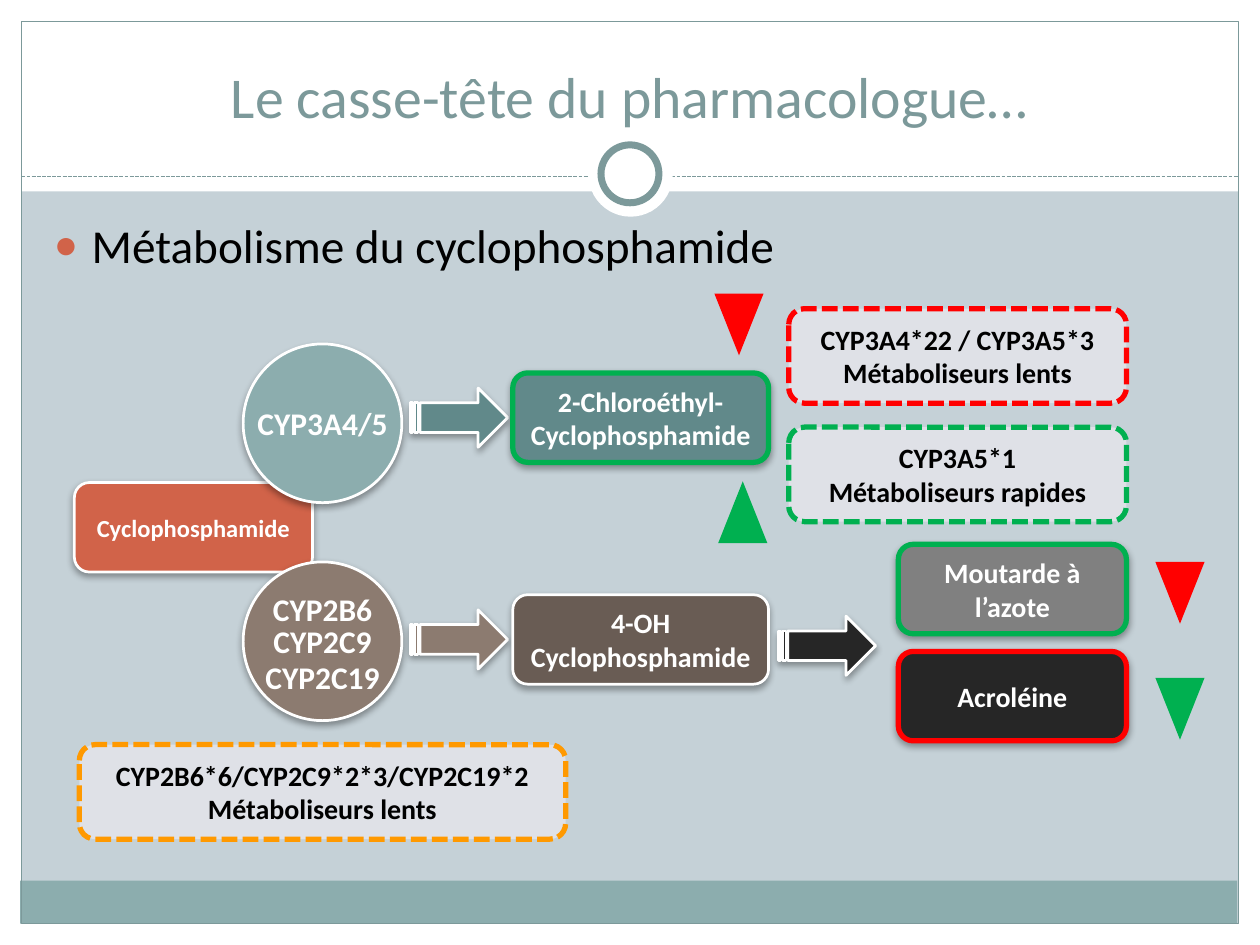
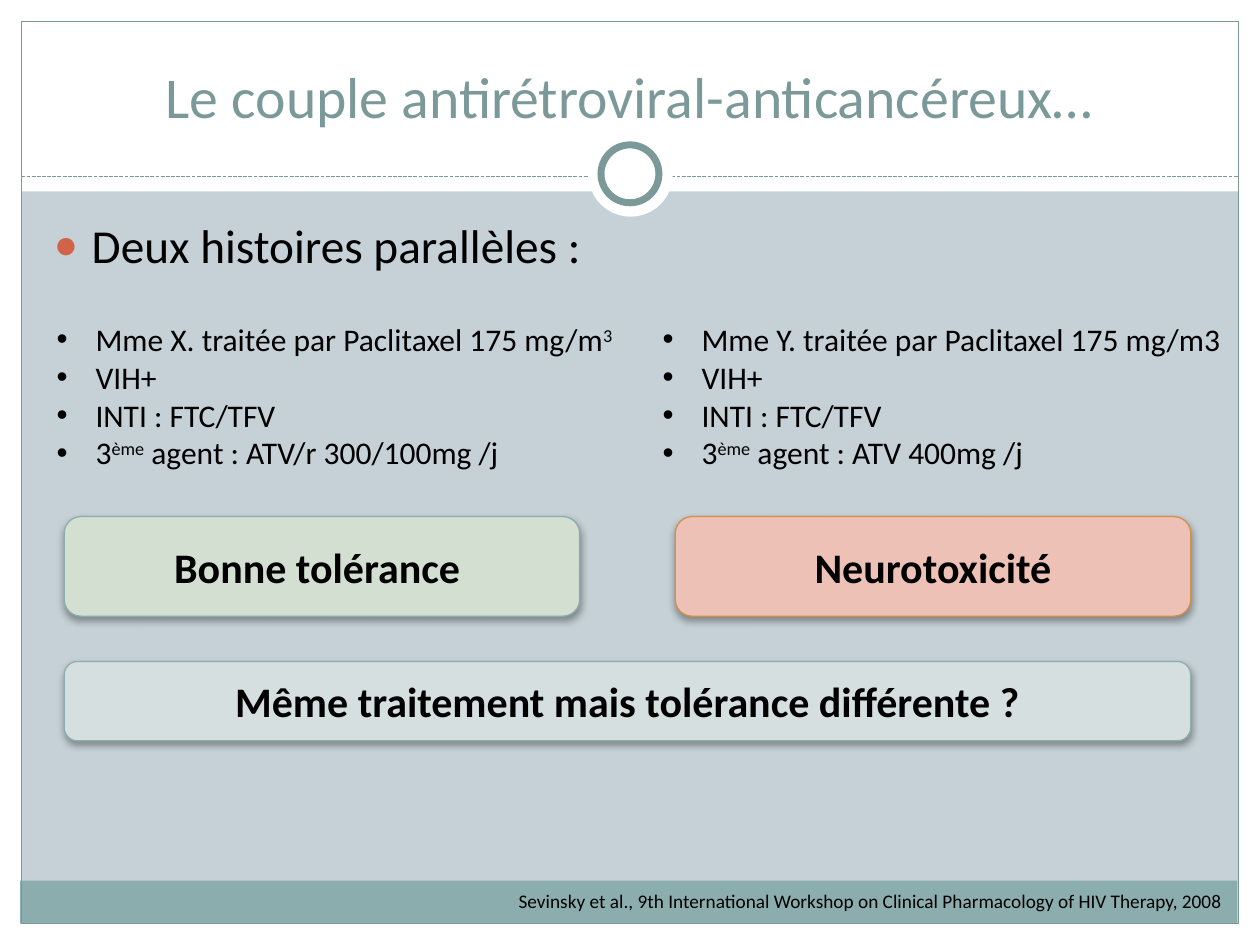
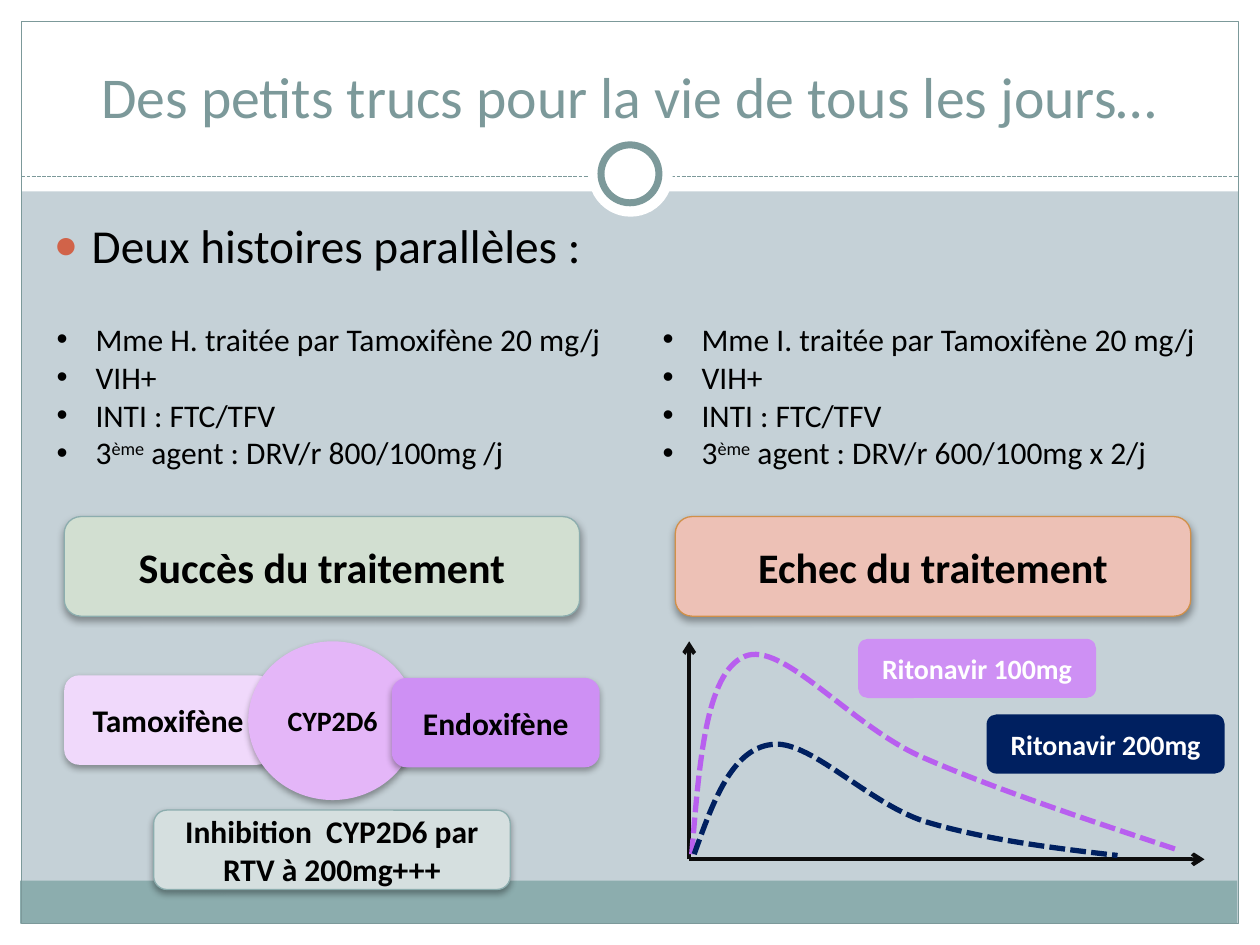
from lxml.etree import SubElement
from pptx import Presentation
from pptx.dml.color import RGBColor
from pptx.enum.dml import MSO_LINE
from pptx.enum.shapes import MSO_CONNECTOR, MSO_SHAPE
from pptx.enum.text import MSO_ANCHOR, MSO_AUTO_SIZE, PP_ALIGN
from pptx.oxml import parse_xml
from pptx.oxml.ns import nsdecls, qn
from pptx.util import Inches, Pt

COLORS = {
    "background": "C5D1D7", "white": "FFFFFF", "black": "000000", "axis": "0D0D0D",
    "slate": "7C999A", "teal": "8CADAE", "deep teal": "61898A", "pale teal": "D5DFDF",
    "rust": "D16349", "ochre": "D19049", "taupe": "8C7B70", "brown": "695C54",
    "charcoal": "262626", "gray": "808080", "mist": "DFE1E7",
    "red": "FF0000", "green": "00B050", "orange": "FF9900",
    "pale green": "D2DFD1", "pale red": "EDC1B6", "navy": "002060",
    "lilac": "F0D9FB", "mauve": "E4B6F8", "violet": "CE90F4", "purple": "B85FEF",
}
RGB = {name: RGBColor.from_string(value) for name, value in COLORS.items()}
FONT = "Calibri"


def write(shape, text, size=16, color="white", bold=True, align=PP_ALIGN.CENTER,
          anchor=MSO_ANCHOR.MIDDLE, bullet=None, bullet_color=None, bullet_size=100, indent=0.31):
    """Fill shape with one paragraph per line; parts between carets are superscript."""
    frame = shape.text_frame
    frame.word_wrap = True
    frame.auto_size = MSO_AUTO_SIZE.NONE
    frame.vertical_anchor = anchor
    for number, line in enumerate(text.split("\n")):
        paragraph = frame.add_paragraph() if number else frame.paragraphs[0]
        paragraph.alignment = align
        if bullet:
            properties = paragraph._p.get_or_add_pPr()
            properties.set("marL", str(Inches(indent)))
            properties.set("indent", str(-Inches(indent)))
            bullet_fill = SubElement(properties, qn("a:buClr"))
            SubElement(bullet_fill, qn("a:srgbClr"), val=COLORS[bullet_color or color])
            SubElement(properties, qn("a:buSzPct"), val=str(bullet_size * 1000))
            SubElement(properties, qn("a:buFont"), typeface="Arial")
            SubElement(properties, qn("a:buChar"), char=bullet)
        for position, part in enumerate(line.split("^")):
            run = paragraph.add_run()
            run.text = part
            run.font.name = FONT
            run.font.size = Pt(size)
            run.font.bold = bold
            run.font.color.rgb = RGB[color]
            if position % 2:
                run.font._element.set("baseline", "30000")


def add_box(slide, at, fill=None, line=None, width=0.75, dashed=False, shadow=False,
            geometry=MSO_SHAPE.ROUNDED_RECTANGLE):
    box = slide.shapes.add_shape(geometry, *map(Inches, at))
    box.shadow.inherit = False
    if fill:
        box.fill.solid()
        box.fill.fore_color.rgb = RGB[fill]
    else:
        box.fill.background()
    if line:
        box.line.color.rgb = RGB[line]
        box.line.width = Pt(width)
        if dashed:
            box.line.dash_style = MSO_LINE.SQUARE_DOT
    else:
        box.line.fill.background()
    if shadow:
        effects = box.element.spPr.find(qn("a:effectLst"))
        effects.append(parse_xml(
            f'<a:outerShdw {nsdecls("a")} blurRad="{Pt(4)}" dist="{Pt(2)}" dir="5400000" '
            f'rotWithShape="0"><a:srgbClr val="{COLORS["black"]}"><a:alpha val="35000"/>'
            '</a:srgbClr></a:outerShdw>'))
    return box


prs = Presentation()
prs.slide_width, prs.slide_height = Inches(10), Inches(7.5)
layout = prs.slide_layouts[5]
background = prs.slide_master.background.fill
background.solid()
background.fore_color.rgb = RGB["background"]
for placeholder in list(layout.placeholders)[1:]:
    layout.shapes.element.remove(placeholder.element)

# Titles and headings
slides = []
for title, heading in [
    ("Le casse-tête du pharmacologue…", "Métabolisme du cyclophosphamide"),
    ("Le couple antirétroviral-anticancéreux…", "Deux histoires parallèles :"),
    ("Des petits trucs pour la vie de tous les jours…", "Deux histoires parallèles :"),
]:
    slide = prs.slides.add_slide(layout)
    slides.append(slide)
    headline = slide.shapes.title
    headline.left, headline.top, headline.width, headline.height = map(
        Inches, (0.33, 0.25, 9.33, 0.83))
    write(headline, title, size=33, color="slate", bold=False, anchor=MSO_ANCHOR.BOTTOM)
    topic = slide.shapes.add_textbox(*map(Inches, (0.33, 1.67, 9.3, 0.6)))
    write(topic, heading, size=27, color="black", bold=False, align=PP_ALIGN.LEFT,
          anchor=MSO_ANCHOR.TOP, bullet="●", bullet_color="rust", bullet_size=85, indent=0.3)
metabolism, couple, tips = slides

# Frame shared by all slides, drawn once and moved to the layout
frame_parts = [
    add_box(metabolism, at, fill, line, geometry=MSO_SHAPE.RECTANGLE)
    for at, fill, line in [
        ((0, 7.33, 10, 0.17), "white", None),
        ((0, 0, 10, 1.52), "white", None),
        ((0, 0, 0.17, 7.5), "white", None),
        ((9.83, 0, 0.17, 7.5), "white", None),
        ((0.16, 6.99, 9.66, 0.34), "teal", None),
        ((0.17, 0.17, 9.66, 7.16), None, "slate"),
    ]
]
divider = metabolism.shapes.add_connector(
    MSO_CONNECTOR.STRAIGHT, *map(Inches, (0.17, 1.4, 9.83, 1.4)))
divider.line.color.rgb = RGB["slate"]
divider.line.width = Pt(0.75)
divider.line.dash_style = MSO_LINE.SQUARE_DOT
SubElement(divider.element.spPr, qn("a:effectLst"))
frame_parts += [
    divider,
    add_box(metabolism, (4.67, 1.05, 0.67, 0.67), "white", geometry=MSO_SHAPE.OVAL),
    add_box(metabolism, (4.77, 1.15, 0.46, 0.46), "white", "slate", 4, geometry=MSO_SHAPE.OVAL),
]
for part in frame_parts:
    layout.shapes.element.append(part.element)

# Slide 1: metabolic pathways
drug = add_box(metabolism, (0.59, 3.83, 1.89, 0.71), "rust", "white", 1.57, shadow=True)
write(drug, "Cyclophosphamide", size=14)
for top, fill in [(2.73, "teal"), (4.46, "taupe")]:
    add_box(metabolism, (1.93, top, 1.26, 1.26), fill, "white", 1.57, shadow=True,
            geometry=MSO_SHAPE.OVAL)
for top, enzyme in [(3.16, "CYP3A4/5"), (4.63, "CYP2B6"), (4.89, "CYP2C9"), (5.17, "CYP2C19")]:
    enzyme_label = metabolism.shapes.add_textbox(*map(Inches, (1.85, top, 1.42, 0.4)))
    write(enzyme_label, enzyme, size=18, anchor=MSO_ANCHOR.TOP)
for left, top, fill in [(3.26, 3.08, "deep teal"), (3.26, 4.84, "taupe"), (6.18, 4.89, "charcoal")]:
    add_box(metabolism, (left, top, 0.77, 0.47), fill, "white", 1.57, shadow=True,
            geometry=MSO_SHAPE.STRIPED_RIGHT_ARROW)
for left, top, width, fill, line, weight, name in [
    (4.07, 2.96, 2.03, "deep teal", "green", 3, "2-Chloroéthyl- Cyclophosphamide"),
    (4.07, 4.72, 2.03, "brown", "white", 1.57, "4-OH Cyclophosphamide"),
    (7.13, 4.32, 1.81, "gray", "green", 3, "Moutarde à l’azote"),
    (7.13, 5.17, 1.81, "charcoal", "red", 3, "Acroléine"),
]:
    metabolite = add_box(metabolism, (left, top, width, 0.71), fill, line, weight, shadow=True)
    write(metabolite, name)
for left, top, width, line, genotype in [
    (6.26, 2.45, 2.68, "red", "CYP3A4*22 / CYP3A5*3\nMétaboliseurs lents"),
    (6.26, 3.39, 2.68, "green", "CYP3A5*1\nMétaboliseurs rapides"),
    (0.63, 5.91, 3.86, "orange", "CYP2B6*6/CYP2C9*2*3/CYP2C19*2\nMétaboliseurs lents"),
]:
    phenotype = add_box(metabolism, (left, top, width, 0.75), "mist", line, 3, dashed=True)
    write(phenotype, genotype, color="black")
for left, top, fill, rotation in [
    (5.7, 3.82, "green", 0), (5.67, 2.33, "red", 180),
    (9.17, 4.46, "red", 180), (9.17, 5.38, "green", 180),
]:
    trend = add_box(metabolism, (left, top, 0.39, 0.49), fill,
                    geometry=MSO_SHAPE.ISOSCELES_TRIANGLE)
    trend.rotation = rotation

# Slides 2 and 3: two patients side by side
for slide, cases in [
    (couple, [
        ("Mme X. traitée par Paclitaxel 175 mg/m^3^", "ATV/r 300/100mg /j", "Bonne tolérance "),
        ("Mme Y. traitée par Paclitaxel 175 mg/m3", "ATV 400mg /j", "Neurotoxicité"),
    ]),
    (tips, [
        ("Mme H. traitée par Tamoxifène 20 mg/j", "DRV/r 800/100mg /j", "Succès du traitement"),
        ("Mme I. traitée par Tamoxifène 20 mg/j", "DRV/r 600/100mg x 2/j", "Echec du traitement"),
    ]),
]:
    columns = [(0.35, 4.72, 0.51, "pale green", "teal"), (5.16, 4.65, 5.36, "pale red", "ochre")]
    for (patient, agent, verdict), (left, width, box_left, fill, line) in zip(cases, columns):
        history = slide.shapes.add_textbox(*map(Inches, (left, 2.49, width, 1.31)))
        write(history, f"{patient}\nVIH+\nINTI : FTC/TFV\n3^ème^ agent : {agent}", size=18,
              color="black", bold=False, align=PP_ALIGN.LEFT, anchor=MSO_ANCHOR.TOP, bullet="•")
        outcome = add_box(slide, (box_left, 4.1, 4.09, 0.79), fill, line, shadow=True)
        write(outcome, verdict, size=24, color="black")

# Slide 2: question and reference
question = add_box(couple, (0.51, 5.25, 8.94, 0.63), "pale teal", "teal", shadow=True)
write(question, "Même traitement mais tolérance différente ?", size=24, color="black")
reference = couple.shapes.add_textbox(*map(Inches, (3.58, 7.01, 6.22, 0.29)))
write(reference, "Sevinsky et al., 9th International Workshop on Clinical Pharmacology of HIV Therapy, 2008",
      size=11, color="black", bold=False, align=PP_ALIGN.RIGHT, anchor=MSO_ANCHOR.TOP)

# Slide 3: conversion of tamoxifen
for at, fill, geometry, size, name in [
    ((0.51, 5.36, 1.65, 0.71), "lilac", MSO_SHAPE.ROUNDED_RECTANGLE, 18, "Tamoxifène"),
    ((1.97, 5.09, 1.34, 1.26), "mauve", MSO_SHAPE.OVAL, 16, "CYP2D6"),
    ((3.11, 5.38, 1.65, 0.71), "violet", MSO_SHAPE.ROUNDED_RECTANGLE, 18, "Endoxifène"),
]:
    step = add_box(tips, at, fill, shadow=True, geometry=geometry)
    write(step, name, size=size, color="black")

# Slide 3: concentration curves
for end in [(5.47, 5.09), (9.56, 6.82)]:
    axis = tips.shapes.add_connector(MSO_CONNECTOR.STRAIGHT, *map(Inches, (5.47, 6.82, *end)))
    axis.line.color.rgb = RGB["axis"]
    axis.line.width = Pt(2.25)
    SubElement(axis.line._get_or_add_ln(), qn("a:tailEnd"), type="arrow")
    SubElement(axis.element.spPr, qn("a:effectLst"))
for color, points in [
    ("purple", [(5.49, 6.78), (5.55, 6.06), (5.6, 5.34), (5.91, 5.21), (6.21, 5.08),
                (6.75, 5.76), (7.32, 6.01), (7.89, 6.26), (8.61, 6.5), (9.33, 6.74)]),
    ("navy", [(5.51, 6.78), (5.66, 6.36), (5.81, 5.95), (6.12, 5.91), (6.42, 5.86),
              (6.88, 6.37), (7.34, 6.52), (7.8, 6.66), (8.34, 6.73), (8.87, 6.79)]),
]:
    start, *controls = [(Inches(x), Inches(y)) for x, y in points]
    builder = tips.shapes.build_freeform(*start)
    builder.add_line_segments(controls, close=False)
    curve = builder.convert_to_shape()
    curve.shadow.inherit = False
    curve.fill.background()
    curve.line.color.rgb = RGB[color]
    curve.line.width = Pt(3)
    curve.line.dash_style = MSO_LINE.SQUARE_DOT
    # Each three straight segments become one Bézier segment
    outline = next(curve.element.iter(qn("a:path")))
    segments = outline.findall(qn("a:lnTo"))
    for first in range(0, len(segments), 3):
        bezier = SubElement(outline, qn("a:cubicBezTo"))
        for segment in segments[first:first + 3]:
            bezier.append(segment[0])
            outline.remove(segment)
for left, top, fill, dose in [(6.81, 5.07, "violet", "100mg"), (7.83, 5.67, "navy", "200mg")]:
    curve_label = add_box(tips, (left, top, 1.89, 0.47), fill)
    write(curve_label, f"Ritonavir {dose}")

inhibition = add_box(tips, (1.22, 6.43, 2.83, 0.63), "pale teal", "teal", shadow=True)
write(inhibition, "Inhibition  CYP2D6 par RTV à 200mg+++", size=18, color="black")

prs.save("out.pptx")
